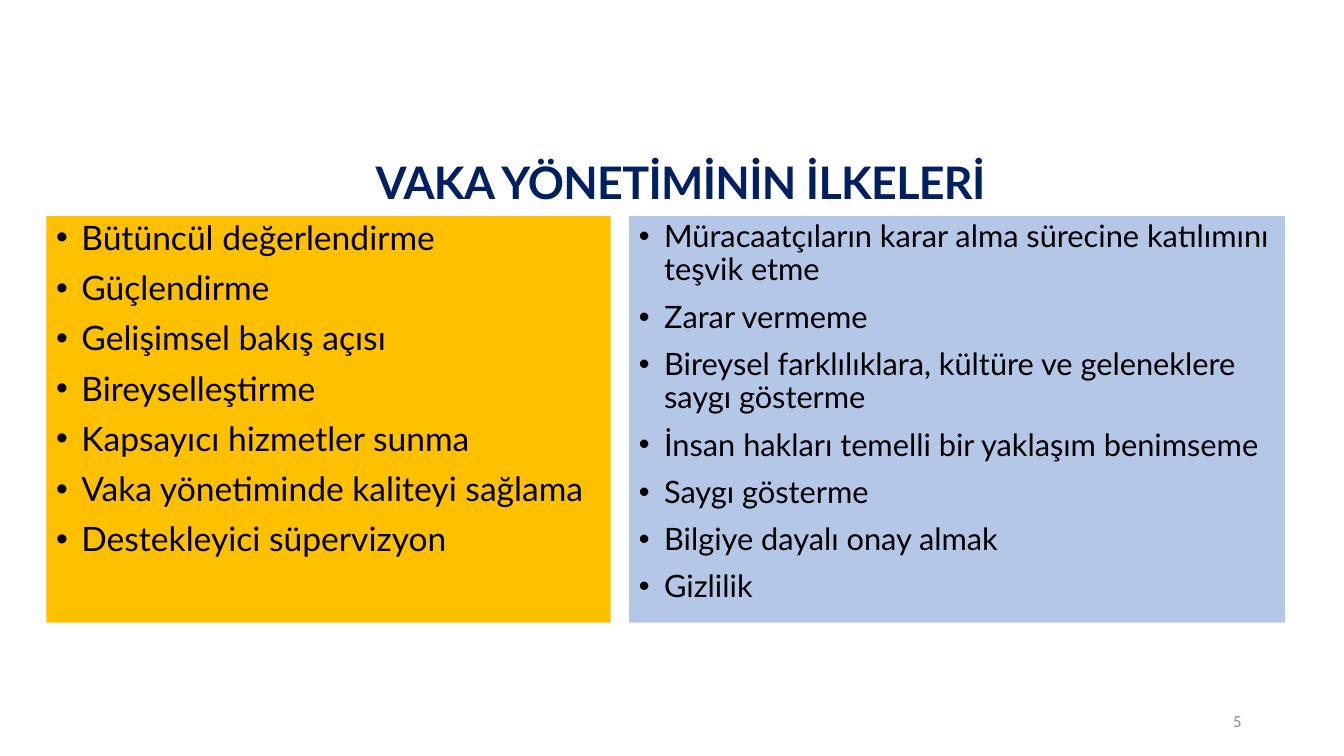
"""Builds the slide on the principles of case management."""
from lxml.etree import SubElement
from pptx import Presentation
from pptx.dml.color import RGBColor
from pptx.enum.shapes import MSO_SHAPE as Shape
from pptx.enum.text import MSO_ANCHOR as Anchor, PP_ALIGN as Align
from pptx.oxml.ns import qn
from pptx.util import Pt

COLORS = {
    "title": "002060",
    "text": "000000",
    "number": "8C8C8C",
    "amber": "FFC000",
    "blue": "B4C7E7",
}

PRINCIPLES_LEFT = [
    "Bütüncül değerlendirme",
    "Güçlendirme",
    "Gelişimsel bakış açısı",
    "Bireyselleştirme",
    "Kapsayıcı hizmetler sunma",
    "Vaka yönetiminde kaliteyi sağlama",
    "Destekleyici süpervizyon",
]
PRINCIPLES_RIGHT = [
    "Müracaatçıların karar alma sürecine katılımını teşvik etme",
    "Zarar vermeme",
    "Bireysel farklılıklara, kültüre ve geleneklere saygı gösterme",
    "İnsan hakları temelli bir yaklaşım benimseme",
    "Saygı gösterme",
    "Bilgiye dayalı onay almak",
    "Gizlilik",
]


class SlideBuilder:
    def __init__(self, slide, font):
        self.shapes = slide.shapes
        self.font = font

    def color(self, name):
        return RGBColor.from_string(COLORS[name])

    def style(self, para, size, color, bold=False, font=None, tracking=0):
        for span in para.runs:
            span.font.name = font or self.font
            span.font.size = Pt(size)
            span.font.bold = bold
            span.font.color.rgb = self.color(color)
            if tracking:
                span.font._element.set("spc", str(round(tracking * 100)))

    def label(self, text, area, align, size, color, line_spacing=1.0, **style):
        box = self.shapes.add_textbox(*map(Pt, area))
        frame = box.text_frame
        frame.word_wrap = True
        frame.vertical_anchor = Anchor.MIDDLE
        frame.text = text
        para = frame.paragraphs[0]
        para.alignment = align
        para.line_spacing = line_spacing
        self.style(para, size, color, **style)

    def bullet_panel(self, items, area, fill, size):
        panel = self.shapes.add_shape(Shape.RECTANGLE, *map(Pt, area))
        panel.shadow.inherit = False
        panel.fill.solid()
        panel.fill.fore_color.rgb = self.color(fill)
        panel.line.fill.background()
        frame = panel.text_frame
        frame.word_wrap = True
        frame.vertical_anchor = Anchor.TOP
        frame.text = "\n".join(items)
        for index, para in enumerate(frame.paragraphs):
            properties = para._p.get_or_add_pPr()
            properties.set("marL", str(Pt(18)))
            properties.set("indent", str(-Pt(18)))
            SubElement(properties, qn("a:buFont"), typeface="Arial")
            SubElement(properties, qn("a:buChar"), char="•")
            para.alignment = Align.LEFT
            para.line_spacing = 0.9
            if index:
                para.space_before = Pt(10)
            self.style(para, size, "text")


def main():
    deck = Presentation()
    deck.slide_width, deck.slide_height = Pt(960), Pt(540)
    page = SlideBuilder(deck.slides.add_slide(deck.slide_layouts[6]), "Lato")
    page.label("VAKA YÖNETİMİNİN İLKELERİ", (72, 110.9, 828, 43.2), Align.CENTER,
               32, "title", line_spacing=0.9, bold=True, tracking=-0.5)
    top, height = 154.4, 290.4
    page.bullet_panel(PRINCIPLES_LEFT, (33.1, top, 403.2, height), "amber", 24)
    page.bullet_panel(PRINCIPLES_RIGHT, (449.3, top, 468.7, height), "blue", 22)
    page.label("5", (678, 500.5, 216, 28.8), Align.RIGHT, 12, "number", font="Calibri")
    deck.save("out.pptx")


if __name__ == "__main__":
    main()
